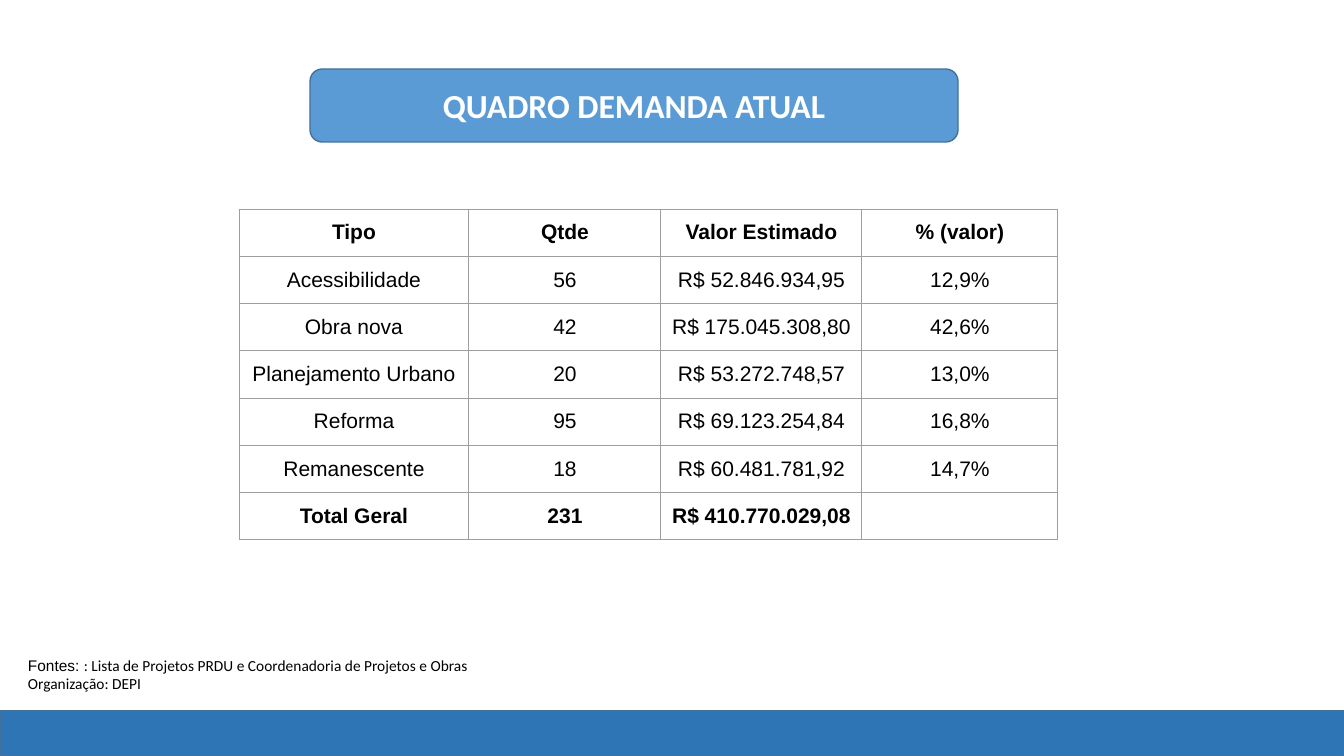
from lxml.etree import SubElement
from pptx import Presentation
from pptx.dml.color import RGBColor
from pptx.enum.shapes import MSO_SHAPE as Preset
from pptx.enum.text import MSO_ANCHOR as Anchor, MSO_AUTO_SIZE as AutoSize, PP_ALIGN as Align
from pptx.oxml.ns import qn
from pptx.util import Emu, Pt

SLIDE_WIDTH, SLIDE_HEIGHT = 1344, 756
WHITE = RGBColor(0xFF, 0xFF, 0xFF)
BLACK = RGBColor(0x00, 0x00, 0x00)
BANNER_BLUE = RGBColor(0x5B, 0x9B, 0xD5)
FOOTER_BLUE = RGBColor(0x2E, 0x75, 0xB5)
OUTLINE_BLUE = RGBColor(0x42, 0x71, 0x9B)
GRID_GREY = RGBColor(0x9E, 0x9E, 0x9E)

COLUMN_WIDTHS = [230, 192, 201, 196]
DEMAND_ROWS = [
    ("Tipo", "Qtde", "Valor Estimado", "% (valor)"),
    ("Acessibilidade", "56", "R$ 52.846.934,95", "12,9%"),
    ("Obra nova", "42", "R$ 175.045.308,80", "42,6%"),
    ("Planejamento Urbano", "20", "R$ 53.272.748,57", "13,0%"),
    ("Reforma", "95", "R$ 69.123.254,84", "16,8%"),
    ("Remanescente", "18", "R$ 60.481.781,92", "14,7%"),
    ("Total Geral", "231", "R$ 410.770.029,08", ""),
]
SOURCE_LINES = [
    [("Fontes: ", "Arial"),
     (": Lista de Projetos PRDU e Coordenadoria de Projetos e Obras", "Calibri")],
    [("Organização: DEPI", "Calibri")],
]


def px(length):
    """Turn a length in px into EMU."""
    return Emu(round(length * 12192000 / SLIDE_WIDTH))


def add_run(paragraph, text, font_name, size, color=BLACK, bold=False):
    """Append one formatted run to a paragraph."""
    run = paragraph.add_run()
    run.text = text
    run.font.name = font_name
    run.font.size = Pt(size)
    run.font.color.rgb = color
    run.font.bold = bold


def add_block(slide, preset, box, fill):
    """Draw a filled shape with the thin blue outline."""
    shape = slide.shapes.add_shape(preset, *map(px, box))
    shape.shadow.inherit = False
    shape.fill.solid()
    shape.fill.fore_color.rgb = fill
    shape.line.color.rgb = OUTLINE_BLUE
    shape.line.width = Pt(1)


def add_banner(slide, box):
    """Place the rounded banner and lay the slide title over it."""
    add_block(slide, Preset.ROUNDED_RECTANGLE, box, BANNER_BLUE)
    title = slide.shapes.title
    title.left, title.top, title.width, title.height = map(px, box)
    slide.shapes._spTree.append(title._element)
    frame = title.text_frame
    frame.word_wrap = True
    frame.auto_size = AutoSize.NONE
    frame.vertical_anchor = Anchor.MIDDLE
    paragraph = frame.paragraphs[0]
    paragraph.alignment = Align.CENTER
    add_run(paragraph, "QUADRO DEMANDA ATUAL", "Calibri", 24, WHITE, True)


def add_sources(slide, box):
    """Write the source credits, one paragraph per line."""
    frame = slide.shapes.add_textbox(*map(px, box)).text_frame
    frame.word_wrap = True
    frame.auto_size = AutoSize.SHAPE_TO_FIT_TEXT
    for index, runs in enumerate(SOURCE_LINES):
        paragraph = frame.add_paragraph() if index else frame.paragraphs[0]
        for text, font_name in runs:
            add_run(paragraph, text, font_name, 11)


def set_borders(cell):
    """Give a table cell a thin grey line on every side."""
    properties = cell._tc.get_or_add_tcPr()
    for side in ("a:lnL", "a:lnR", "a:lnT", "a:lnB"):
        line = SubElement(properties, qn(side), w=str(Pt(0.75)))
        fill = SubElement(line, qn("a:solidFill"))
        SubElement(fill, qn("a:srgbClr"), val=str(GRID_GREY))


def fill_cell(cell, text, bold):
    """Format one table cell and write its centred text."""
    set_borders(cell)
    cell.fill.background()
    cell.margin_left = cell.margin_right = cell.margin_top = cell.margin_bottom = 0
    cell.vertical_anchor = Anchor.MIDDLE
    if text:
        paragraph = cell.text_frame.paragraphs[0]
        paragraph.alignment = Align.CENTER
        add_run(paragraph, text, "Arial", 15, bold=bold)


def add_demand_table(slide, box):
    """Build the demand table with bold header and total rows."""
    row_count = len(DEMAND_ROWS)
    table = slide.shapes.add_table(row_count, len(COLUMN_WIDTHS), *map(px, box)).table
    table.first_row = table.horz_banding = False
    for column, width in zip(table.columns, COLUMN_WIDTHS):
        column.width = px(width)
    for index, (row, texts) in enumerate(zip(table.rows, DEMAND_ROWS)):
        row.height = px(box[3] / row_count)
        for cell, text in zip(row.cells, texts):
            fill_cell(cell, text, index in (0, row_count - 1))


def main():
    """Build the slide and save it."""
    presentation = Presentation()
    presentation.slide_width = px(SLIDE_WIDTH)
    presentation.slide_height = px(SLIDE_HEIGHT)
    slide = presentation.slides.add_slide(presentation.slide_layouts[5])
    add_block(slide, Preset.RECTANGLE, (0, 711, SLIDE_WIDTH, 45), FOOTER_BLUE)
    add_banner(slide, (310, 69, 648, 73))
    add_sources(slide, (18, 651, 533, 47))
    add_demand_table(slide, (239, 209, sum(COLUMN_WIDTHS), 331))
    presentation.save("out.pptx")


if __name__ == "__main__":
    main()
